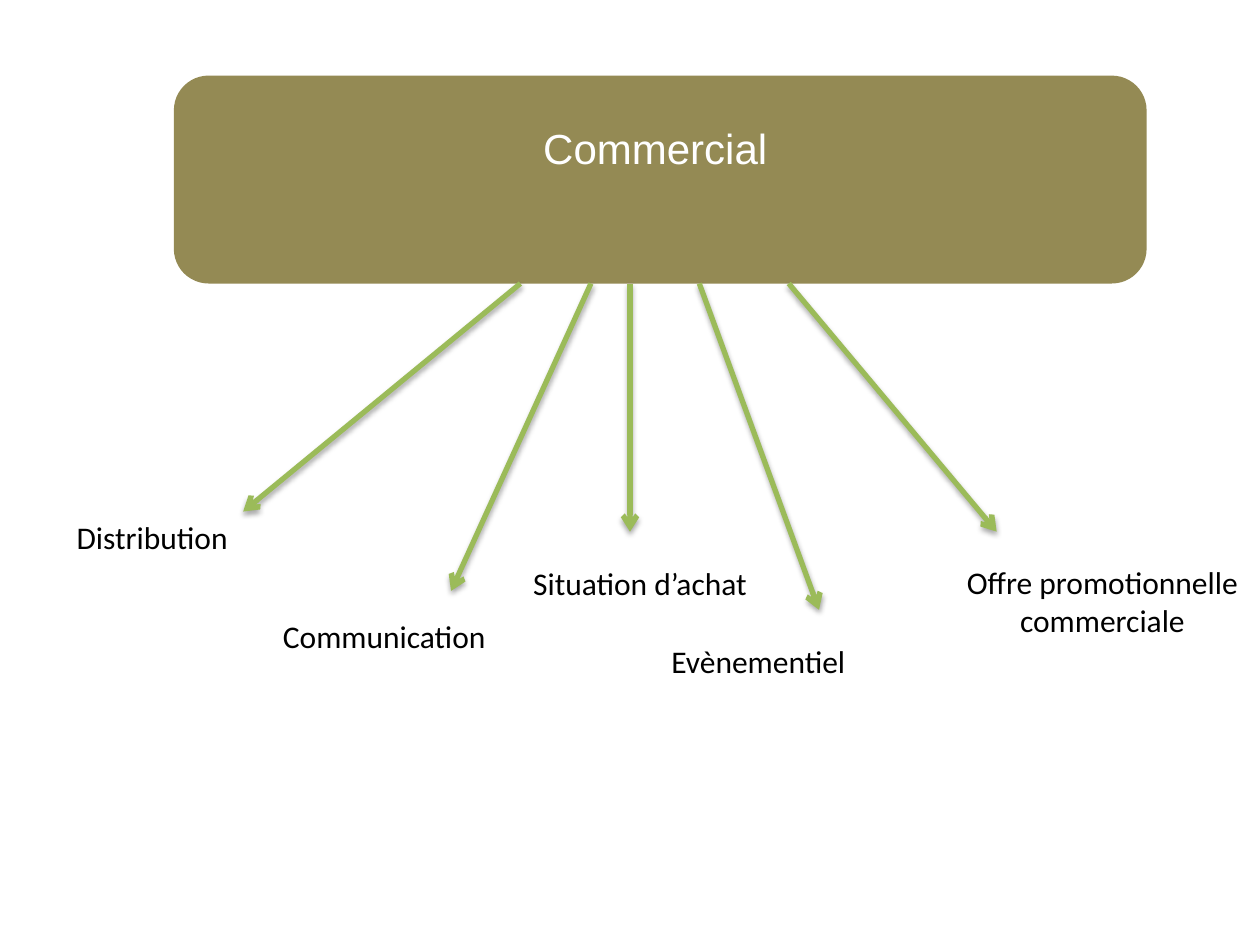
from lxml import etree
from pptx import Presentation
from pptx.dml.color import RGBColor
from pptx.enum.shapes import MSO_CONNECTOR, MSO_SHAPE
from pptx.enum.text import MSO_ANCHOR, MSO_AUTO_SIZE, PP_ALIGN
from pptx.oxml import parse_xml
from pptx.oxml.ns import qn
from pptx.util import Inches, Pt

ROUNDED = MSO_SHAPE.ROUNDED_RECTANGLE
STRAIGHT = MSO_CONNECTOR.STRAIGHT
TOP = MSO_ANCHOR.TOP
GROW = MSO_AUTO_SIZE.SHAPE_TO_FIT_TEXT
LEFT, CENTER = PP_ALIGN.LEFT, PP_ALIGN.CENTER

SHADOW = """
<a:effectLst xmlns:a="http://schemas.openxmlformats.org/drawingml/2006/main">
  <a:outerShdw blurRad="40000" dist="23000" dir="5400000" rotWithShape="0">
    <a:srgbClr val="000000"><a:alpha val="35000"/></a:srgbClr>
  </a:outerShdw>
</a:effectLst>
"""


def color(value):
    return RGBColor.from_string(value)


class SlideBuilder:
    olive = "948A54"
    green = "9BBB59"
    black = "000000"
    white = "FFFFFF"

    def __init__(self, page):
        self.page = page

    def set_text(self, box, text, font, size, ink, align):
        frame = box.text_frame
        frame.text = text
        frame.word_wrap = True
        frame.auto_size = GROW
        frame.vertical_anchor = TOP
        para = frame.paragraphs[0]
        para.alignment = align
        span = para.runs[0]
        span.font.name = font
        span.font.size = Pt(size)
        span.font.color.rgb = color(ink)

    def title(self, text, left, top, width, height):
        box = self.page.shapes.title
        box.left, box.top = Inches(left), Inches(top)
        box.width, box.height = Inches(width), Inches(height)
        self.set_text(box, text, "Arial", 24, self.white, CENTER)

    def panel_behind_title(self, left, top, width, height):
        panel = self.page.shapes.add_shape(
            ROUNDED, Inches(left), Inches(top), Inches(width), Inches(height))
        panel.shadow.inherit = False
        panel.fill.solid()
        panel.fill.fore_color.rgb = color(self.olive)
        panel.line.fill.background()
        self.page.shapes.title.element.addprevious(panel.element)

    def arrow(self, start, end):
        arrow = self.page.shapes.add_connector(
            STRAIGHT, *(Inches(value) for value in start + end))
        arrow.line.color.rgb = color(self.green)
        arrow.line.width = Pt(3)
        properties = arrow.element.spPr
        etree.SubElement(properties.find(qn("a:ln")), qn("a:tailEnd"), type="arrow")
        properties.append(parse_xml(SHADOW))

    def label(self, text, left, top, height, align):
        box = self.page.shapes.add_textbox(
            Inches(left), Inches(top), Inches(2.36), Inches(height))
        self.set_text(box, text, "Calibri", 18, self.black, align)


def main():
    deck = Presentation()
    deck.slide_width, deck.slide_height = Inches(10), Inches(7.5)
    builder = SlideBuilder(deck.slides.add_slide(deck.slide_layouts[5]))

    panel_top, panel_height = 0.6, 1.65
    panel_bottom = panel_top + panel_height
    builder.title("Commercial", 2.09, 0.92, 6.22, 0.5)
    builder.panel_behind_title(1.38, panel_top, 7.72, panel_height)

    arrows = [
        (4.13, (1.93, 4.06)),
        (4.69, (3.58, 4.69)),
        (5, (5, 4.22)),
        (5.55, (6.5, 4.84)),
        (6.26, (7.91, 4.22)),
    ]
    for start, tip in arrows:
        builder.arrow((start, panel_bottom), tip)

    labels = [
        ("Distribution", 0.51, 4.06, 0.4, LEFT),
        ("Communication", 1.87, 4.85, 0.4, CENTER),
        ("Situation d’achat", 3.9, 4.43, 0.4, CENTER),
        ("Evènementiel", 5.23, 5.05, 0.4, LEFT),
        ("Offre promotionnelle commerciale", 7.57, 4.42, 0.71, CENTER),
    ]
    for label in labels:
        builder.label(*label)

    deck.save("out.pptx")


if __name__ == "__main__":
    main()
